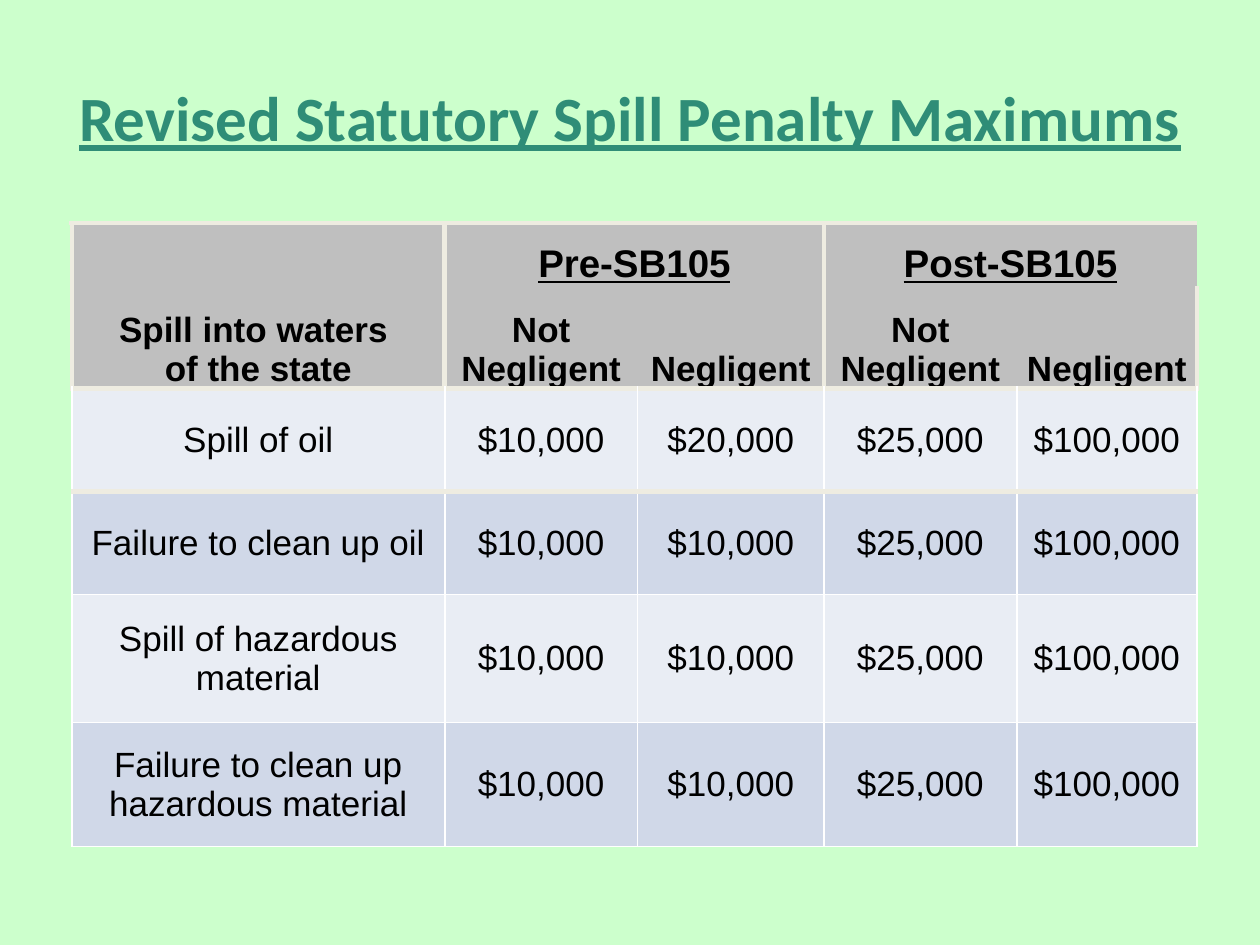
from lxml.etree import SubElement
from pptx import Presentation
from pptx.dml.color import RGBColor
from pptx.enum.text import MSO_ANCHOR, PP_ALIGN
from pptx.oxml.ns import qn
from pptx.util import Inches, Pt

MINT = RGBColor(0xCC, 0xFF, 0xCC)
TEAL = RGBColor(0x2F, 0x8D, 0x77)
BLACK = RGBColor(0, 0, 0)
WHITE = RGBColor(0xFF, 0xFF, 0xFF)
GRAY = RGBColor(0xBF, 0xBF, 0xBF)
CREAM = RGBColor(0xEE, 0xEC, 0xE1)
PALE = RGBColor(0xE9, 0xED, 0xF4)
BLUE = RGBColor(0xD0, 0xD8, 0xE8)

COLS = [2.96, 1.53, 1.48, 1.53, 1.43]
ROWS = [0.5, 0.82, 0.82, 0.82, 1.02, 0.99]
CELLS = [
    ["Spill into waters \nof the state", "Pre-SB105", "", "Post-SB105", ""],
    ["", "Not Negligent", "Negligent", "Not Negligent", "Negligent"],
    ["Spill of oil", "$10,000", "$20,000", "$25,000", "$100,000"],
    ["Failure to clean up oil", "$10,000", "$10,000", "$25,000", "$100,000"],
    ["Spill of hazardous material", "$10,000", "$10,000", "$25,000", "$100,000"],
    ["Failure to clean up hazardous material", "$10,000", "$10,000", "$25,000", "$100,000"],
]
HEAD = 2


def style(frame, name, size, color, bold, under=False):
    """Centre the text of a frame and format its runs."""
    for para in frame.paragraphs:
        para.alignment = PP_ALIGN.CENTER
        for run in para.runs:
            font = run.font
            font.name, font.size = name, Pt(size)
            font.bold, font.underline = bold, under
            font.color.rgb = color


def border(cell, side, color, width):
    """Add one border line to a cell; None as colour hides it."""
    line = SubElement(cell._tc.get_or_add_tcPr(), qn(f"a:ln{side}"), w=str(Pt(width)))
    if color is None:
        SubElement(line, qn("a:noFill"))
    else:
        fill = SubElement(line, qn("a:solidFill"))
        SubElement(fill, qn("a:srgbClr"), val=str(color))


def edge(row, col, side):
    """Return the colour and width of a cell's border."""
    thick, thin = (CREAM, 3), (WHITE, 1)
    if row < HEAD:
        if col == 0:
            return thick
        inner = "R" if col % 2 else "L"
        middle = "B" if row == 0 else "T"
        return (None, 1) if side in (inner, middle) else thick
    if (row, side) in ((HEAD, "T"), (HEAD, "B"), (HEAD + 1, "T")):
        return thick
    return thin


def add_title(slide, left, top, width, height):
    """Place the slide title in the given box."""
    title = slide.shapes.title
    title.left, title.top = left, top
    title.width, title.height = width, height
    frame = title.text_frame
    frame.text = "Revised Statutory Spill Penalty Maximums"
    frame.vertical_anchor = MSO_ANCHOR.MIDDLE
    style(frame, "Calibri", 36, TEAL, True, True)


def add_grid(slide, left, top, width, height):
    """Place the penalty table in the given box."""
    grid = slide.shapes.add_table(len(ROWS), len(COLS), left, top, width, height).table
    for col, share in zip(grid.columns, COLS):
        col.width = int(width * share / sum(COLS))
    for row, share in zip(grid.rows, ROWS):
        row.height = int(height * share / sum(ROWS))
    for first, last in (((0, 0), (1, 0)), ((0, 1), (0, 2)), ((0, 3), (0, 4))):
        grid.cell(*first).merge(grid.cell(*last))
    for row, texts in enumerate(CELLS):
        head = row < HEAD
        for col, text in enumerate(texts):
            cell = grid.cell(row, col)
            cell.margin_left = cell.margin_right = Inches(0.07)
            cell.margin_top = cell.margin_bottom = 0
            cell.vertical_anchor = MSO_ANCHOR.BOTTOM if head else MSO_ANCHOR.MIDDLE
            for side in "LRTB":
                border(cell, side, *edge(row, col, side))
            cell.fill.solid()
            cell.fill.fore_color.rgb = GRAY if head else (BLUE if row % 2 else PALE)
            if text:
                cell.text_frame.text = text
                group = row == 0 and col > 0
                style(cell.text_frame, "Arial", 22 if group else 20, BLACK, head, group)


def main():
    """Build the slide and save it."""
    deck = Presentation()
    deck.slide_width, deck.slide_height = Inches(10), Inches(7.5)
    slide = deck.slides.add_slide(deck.slide_layouts[5])
    slide.background.fill.solid()
    slide.background.fill.fore_color.rgb = MINT
    add_title(slide, Inches(0.5), Inches(0.3), Inches(9), Inches(1.25))
    add_grid(slide, Inches(0.57), Inches(1.77), Inches(8.93), Inches(4.95))
    deck.save("out.pptx")


if __name__ == "__main__":
    main()
